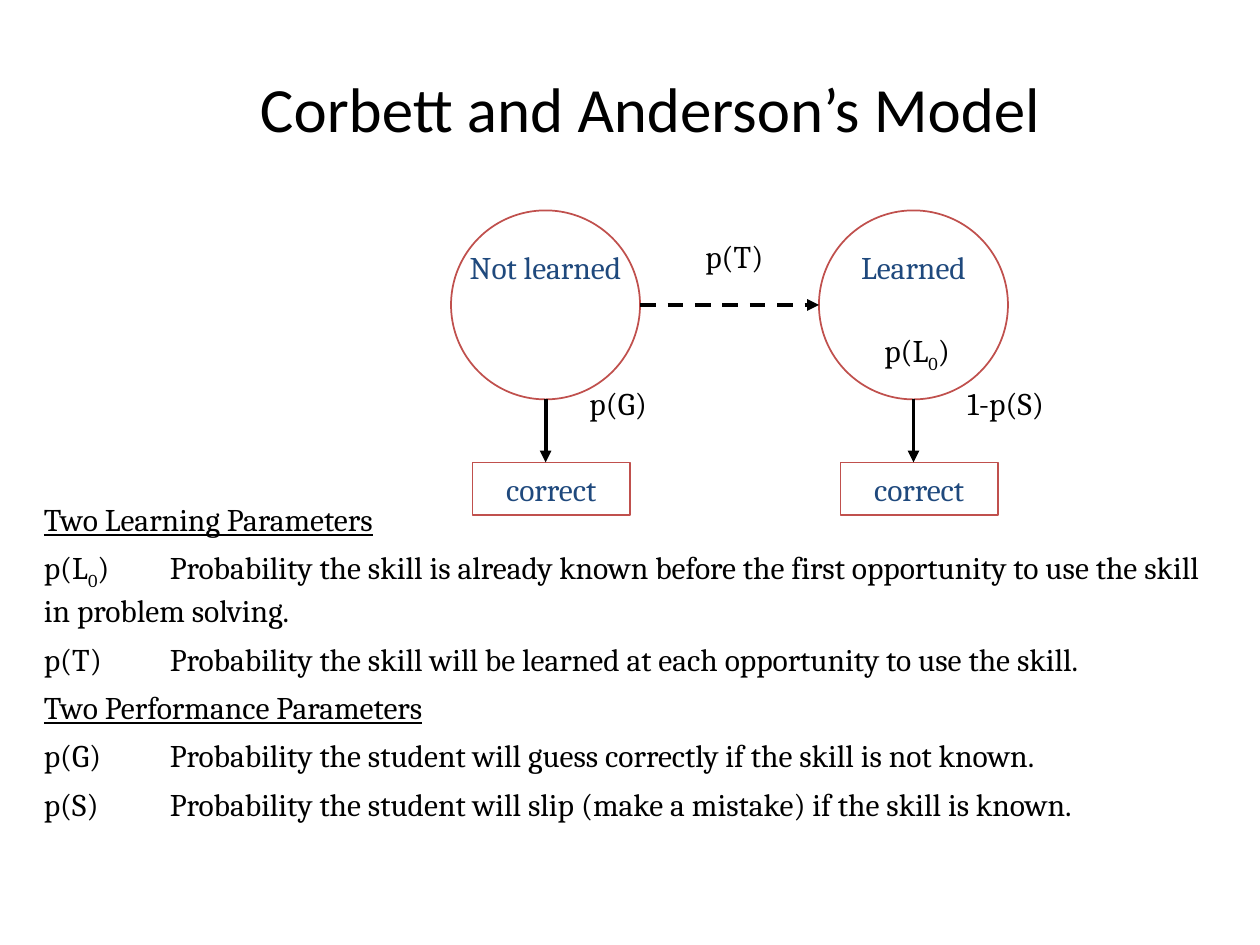
from dataclasses import dataclass

from lxml.etree import SubElement
from pptx import Presentation
from pptx.dml.color import RGBColor
from pptx.enum.dml import MSO_LINE
from pptx.enum.shapes import MSO_CONNECTOR, MSO_SHAPE
from pptx.enum.text import MSO_ANCHOR, PP_ALIGN
from pptx.oxml.ns import qn
from pptx.util import Inches, Pt


@dataclass(frozen=True)
class Theme:
    ink: RGBColor = RGBColor(0x00, 0x00, 0x00)
    paper: RGBColor = RGBColor(0xFF, 0xFF, 0xFF)
    outline: RGBColor = RGBColor(0xC0, 0x50, 0x4D)
    state: RGBColor = RGBColor(0x1F, 0x49, 0x7D)
    title_font: str = "Calibri"
    body_font: str = "Cambria"
    title_size: Pt = Pt(36)
    body_size: Pt = Pt(18)
    paragraph_gap: Pt = Pt(6)
    outline_width: Pt = Pt(1)
    arrow_width: Pt = Pt(2.25)


class ModelSlide:
    def __init__(self, deck, theme):
        self.theme = theme
        self.slide = deck.slides.add_slide(deck.slide_layouts[5])

    def run(self, paragraph, text, color, underline=False, subscript=False):
        run = paragraph.add_run()
        run.text = text
        run.font.name = self.theme.body_font
        run.font.size = self.theme.body_size
        run.font.color.rgb = color
        if underline:
            run.font.underline = True
        if subscript:
            run.font._element.set("baseline", "-25000")
        return run

    def runs(self, paragraph, parts, color, underline=False):
        for index, part in enumerate(parts):
            self.run(paragraph, part, color, underline, subscript=index == 1)

    def title(self, text, left, top, width, height):
        title = self.slide.shapes.title
        title.left, title.top = Inches(left), Inches(top)
        title.width, title.height = Inches(width), Inches(height)
        title.text_frame.vertical_anchor = MSO_ANCHOR.MIDDLE
        paragraph = title.text_frame.paragraphs[0]
        paragraph.alignment = PP_ALIGN.CENTER
        run = self.run(paragraph, text, self.theme.ink)
        run.font.name = self.theme.title_font
        run.font.size = self.theme.title_size

    def label(self, parts, left, top, width, color, align=PP_ALIGN.LEFT):
        label = self.slide.shapes.add_textbox(
            Inches(left), Inches(top), Inches(width), Inches(0.4))
        label.text_frame.word_wrap = True
        paragraph = label.text_frame.paragraphs[0]
        paragraph.alignment = align
        self.runs(paragraph, parts, color)

    def node(self, preset, left, top, width, height, text=None):
        node = self.slide.shapes.add_shape(
            preset, Inches(left), Inches(top), Inches(width), Inches(height))
        node.shadow.inherit = False
        node.fill.background()
        node.line.color.rgb = self.theme.outline
        node.line.width = self.theme.outline_width
        if text:
            node.text_frame.vertical_anchor = MSO_ANCHOR.MIDDLE
            paragraph = node.text_frame.paragraphs[0]
            paragraph.alignment = PP_ALIGN.CENTER
            self.run(paragraph, text, self.theme.state)

    def arrow(self, x1, y1, x2, y2, dashed=False):
        arrow = self.slide.shapes.add_connector(
            MSO_CONNECTOR.STRAIGHT, Inches(x1), Inches(y1), Inches(x2), Inches(y2))
        arrow.line.color.rgb = self.theme.ink
        arrow.line.width = self.theme.arrow_width
        if dashed:
            arrow.line.dash_style = MSO_LINE.DASH
        SubElement(arrow.line._get_or_add_ln(), qn("a:tailEnd"), type="triangle")
        SubElement(arrow._element.spPr, qn("a:effectLst"))

    def definitions(self, groups, left, top, width, height):
        panel = self.slide.shapes.add_shape(
            MSO_SHAPE.RECTANGLE, Inches(left), Inches(top), Inches(width), Inches(height))
        panel.shadow.inherit = False
        panel.fill.solid()
        panel.fill.fore_color.rgb = self.theme.paper
        panel.line.fill.background()
        frame = panel.text_frame
        frame.word_wrap = True
        frame.vertical_anchor = MSO_ANCHOR.TOP
        lines = []
        for heading, entries in groups:
            lines.append(([heading], True))
            lines.extend((entry, False) for entry in entries)
        for index, (parts, underline) in enumerate(lines):
            paragraph = frame.add_paragraph() if index else frame.paragraphs[0]
            paragraph.alignment = PP_ALIGN.LEFT
            if index:
                paragraph.space_before = self.theme.paragraph_gap
            tabs = SubElement(paragraph._p.get_or_add_pPr(), qn("a:tabLst"))
            SubElement(tabs, qn("a:tab"), pos=str(Inches(1)), algn="l")
            self.runs(paragraph, parts, self.theme.ink, underline)


deck = Presentation()
deck.slide_width, deck.slide_height = Inches(10), Inches(7.5)
theme = Theme()
model = ModelSlide(deck, theme)

model.title("Corbett and Anderson\u2019s Model", 0.32, 0.25, 9.68, 1.21)

parameters = [
    ("Two Learning Parameters", [
        ["p(L", "0", ")\tProbability the skill is already known before the first "
                     "opportunity to use the skill in problem solving."],
        ["p(T)\tProbability the skill will be learned at each opportunity to use the skill."],
    ]),
    ("Two Performance Parameters", [
        ["p(G)\tProbability the student will guess correctly if the skill is not known."],
        ["p(S)\tProbability the student will slip (make a mistake) if the skill is known."],
    ]),
]
model.definitions(parameters, 0.25, 3.92, 9.5, 3.41)

diameter, circle_top, answer_top = 1.5, 1.67, 3.67
radius = diameter / 2
circle_bottom = circle_top + diameter
states = [
    ("Not learned", 4.33, "p(G)", 0.25),
    ("Learned", 7.25, "1-p(S)", 0.33),
]
for state, center, chance, chance_offset in states:
    model.node(MSO_SHAPE.OVAL, center - radius, circle_top, diameter, diameter)
    model.label([state], center - 0.92, 1.92, 1.84, theme.state, PP_ALIGN.CENTER)
    model.node(MSO_SHAPE.RECTANGLE, center - 0.58, answer_top, 1.25, 0.42, "correct")
    model.arrow(center, circle_bottom, center, answer_top)
    model.label([chance], center + chance_offset, 3, 1.17, theme.ink)

circle_middle = circle_top + radius
model.arrow(states[0][1] + radius, circle_middle,
            states[1][1] - radius, circle_middle, dashed=True)
model.label(["p(T)"], 5.5, 1.83, 0.67, theme.ink)
model.label(["p(L", "0", ")"], 6.92, 2.58, 1, theme.ink)

deck.save("out.pptx")
